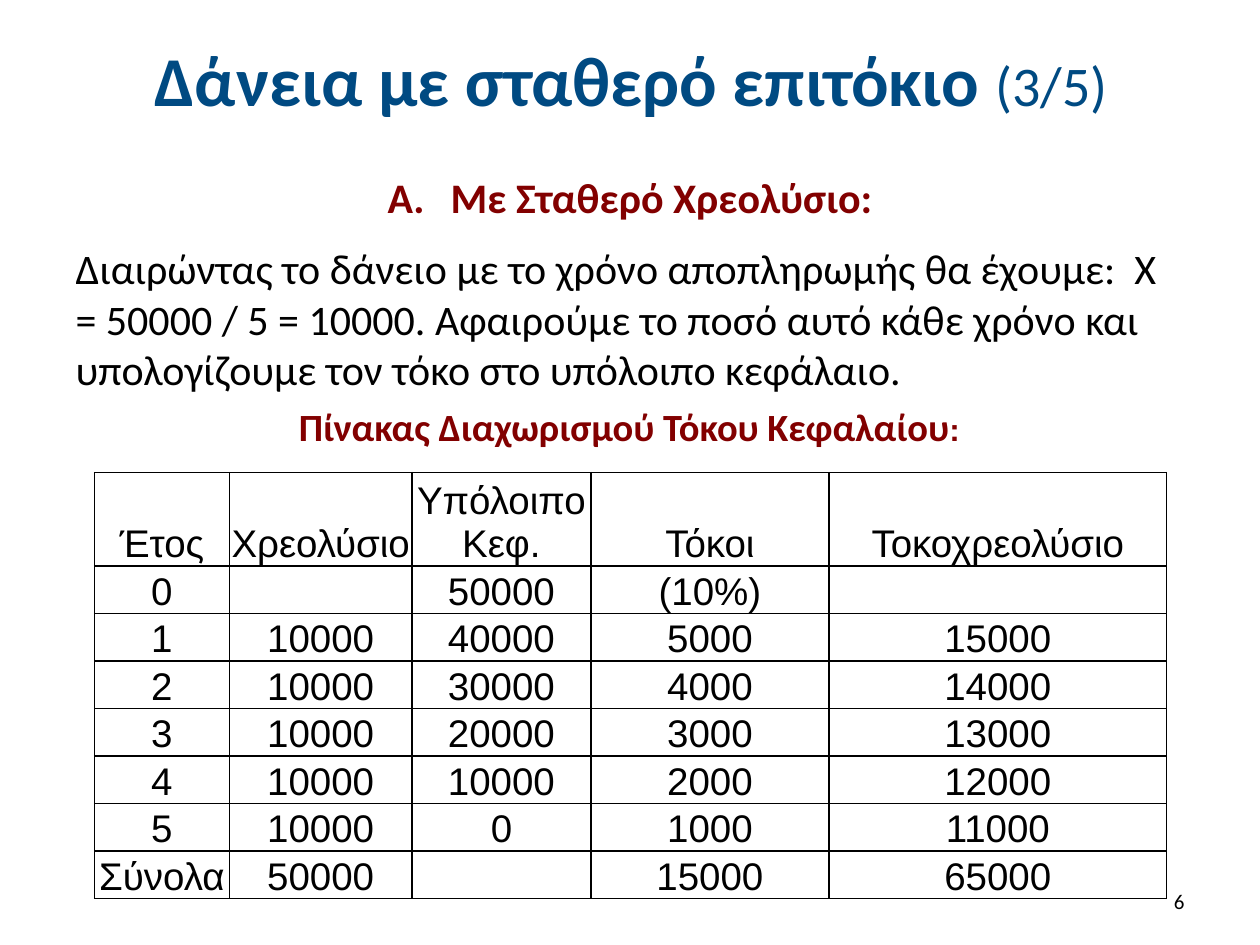
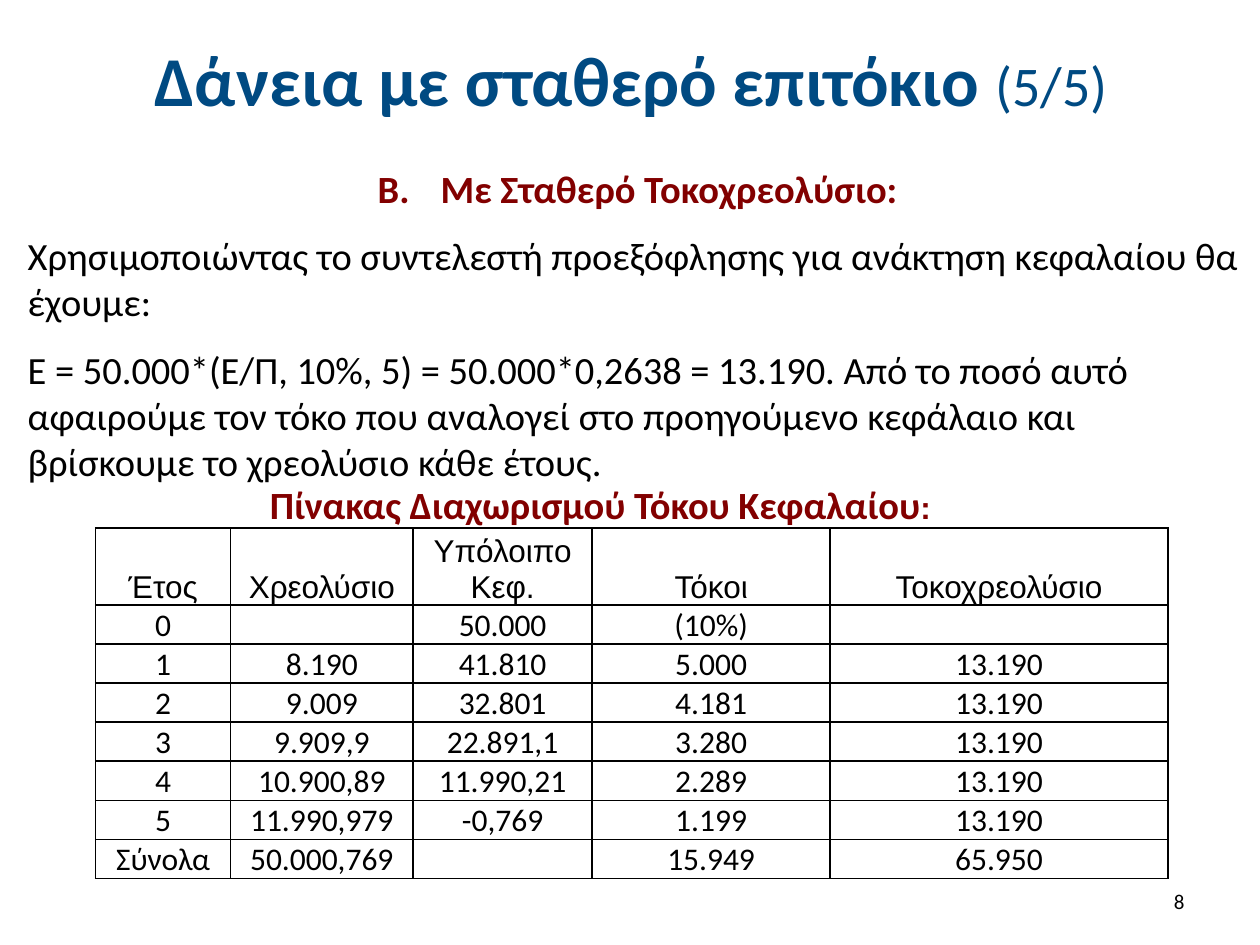
from lxml import etree
from pptx import Presentation
from pptx.dml.color import RGBColor
from pptx.enum.text import MSO_ANCHOR, MSO_AUTO_SIZE, PP_ALIGN
from pptx.oxml.ns import qn
from pptx.util import Inches, Pt

CENTER, LEFT, RIGHT = PP_ALIGN.CENTER, PP_ALIGN.LEFT, PP_ALIGN.RIGHT
MIDDLE, BOTTOM = MSO_ANCHOR.MIDDLE, MSO_ANCHOR.BOTTOM
FIXED = MSO_AUTO_SIZE.NONE
TITLE_AND_CONTENT = 1

# Shared look
BLUE, RED, BLACK = "004A82", "820000", "000000"
HEADING_FONT, TABLE_FONT = "Calibri", "Arial"
TITLE_BOX = (0.51, 0.13, 9, 0.99)
NUMBER_BOX = (7.17, 6.95, 2.33, 0.4)
COLUMN_WIDTHS = (1.07, 1.45, 1.42, 1.89, 2.68)
MINIMUM_ROW_HEIGHT = 0.18
CELL_MARGIN = 0.01

# Shared wording
TITLE = "Δάνεια με σταθερό επιτόκιο "
CAPTION = "Πίνακας Διαχωρισμού Τόκου Κεφαλαίου"
HEADERS = ("Έτος", "Χρεολύσιο", "Υπόλοιπο Κεφ.", "Τόκοι", "Τοκοχρεολύσιο")

LOANS = [
    {
        "part": "(3/5)", "number": "6",
        "body_box": (0.5, 1.31, 9, 1.89), "body_size": 24, "letter": 1,
        "heading": "Με Σταθερό Χρεολύσιο:",
        "body": [
            "Διαιρώντας το δάνειο με το χρόνο αποπληρωμής θα έχουμε:  Χ = "
            "50000 / 5 = 10000. Αφαιρούμε το ποσό αυτό κάθε χρόνο και "
            "υπολογίζουμε τον τόκο στο υπόλοιπο κεφάλαιο.",
        ],
        "caption_box": (2.24, 3.15, 5.51, 0.47),
        "table_box": (0.75, 3.75, 8.5, 3.38),
        "table_size": 22, "value_font": TABLE_FONT,
        "values": [
            ("0", "", "50000", "(10%)", ""),
            ("1", "10000", "40000", "5000", "15000"),
            ("2", "10000", "30000", "4000", "14000"),
            ("3", "10000", "20000", "3000", "13000"),
            ("4", "10000", "10000", "2000", "12000"),
            ("5", "10000", "0", "1000", "11000"),
            ("Σύνολα", "50000", "", "15000", "65000"),
        ],
    },
    {
        "part": "(5/5)", "number": "8",
        "body_box": (0.12, 1.26, 9.88, 2.57), "body_size": 22, "letter": 2,
        "heading": "Με Σταθερό Τοκοχρεολύσιο:",
        "body": [
            "Χρησιμοποιώντας το συντελεστή προεξόφλησης για ανάκτηση "
            "κεφαλαίου θα έχουμε:",
            "Ε = 50.000*(Ε/Π, 10%, 5) = 50.000*0,2638 = 13.190. Από το ποσό "
            "αυτό αφαιρούμε τον τόκο που αναλογεί στο προηγούμενο κεφάλαιο "
            "και βρίσκουμε το χρεολύσιο κάθε έτους.",
        ],
        "caption_box": (2.01, 3.77, 5.51, 0.47),
        "table_box": (0.76, 4.19, 8.5, 2.78),
        "table_size": 18, "value_font": HEADING_FONT,
        "values": [
            ("0", "", "50.000", "(10%)", ""),
            ("1", "8.190", "41.810", "5.000", "13.190"),
            ("2", "9.009", "32.801", "4.181", "13.190"),
            ("3", "9.909,9", "22.891,1", "3.280", "13.190"),
            ("4", "10.900,89", "11.990,21", "2.289", "13.190"),
            ("5", "11.990,979", "-0,769", "1.199", "13.190"),
            ("Σύνολα", "50.000,769", "", "15.949", "65.950"),
        ],
    },
]


def set_all(target, values):
    for name, value in values.items():
        setattr(target, name, value)


def color(hex_value):
    return RGBColor.from_string(hex_value)


def place(shape, box):
    names = ("left", "top", "width", "height")
    set_all(shape, dict(zip(names, map(Inches, box))))


def add_run(paragraph, text, size, hex_value, bold=False, font=HEADING_FONT):
    run = paragraph.add_run()
    run.text = text
    set_all(run.font, {"name": font, "size": Pt(size), "bold": bold})
    run.font.color.rgb = color(hex_value)


def add_title(slide, part):
    title = slide.shapes.title
    place(title, TITLE_BOX)
    set_all(title.text_frame, {"auto_size": FIXED, "vertical_anchor": MIDDLE})
    paragraph = title.text_frame.paragraphs[0]
    paragraph.alignment = CENTER
    add_run(paragraph, TITLE, 40, BLUE, bold=True)
    add_run(paragraph, part, 32, BLUE)


def set_bullet(paragraph, letter=None):
    """Number the paragraph with a capital letter, or drop its bullet."""
    properties = paragraph._p.get_or_add_pPr()
    indent = Inches(0.5) if letter else 0
    properties.set("marL", str(indent))
    properties.set("indent", str(-indent))
    if letter:
        etree.SubElement(properties, qn("a:buFont"), typeface="+mj-lt")
        etree.SubElement(properties, qn("a:buAutoNum"),
                         type="alphaUcPeriod", startAt=str(letter))
    else:
        etree.SubElement(properties, qn("a:buNone"))


def add_body(slide, loan):
    body = slide.placeholders[1]
    place(body, loan["body_box"])
    frame = body.text_frame
    frame.auto_size = FIXED
    for index, text in enumerate([loan["heading"], *loan["body"]]):
        is_heading = index == 0
        paragraph = frame.paragraphs[0] if is_heading else frame.add_paragraph()
        set_all(paragraph, {"alignment": CENTER if is_heading else LEFT,
                            "space_before": Pt(12)})
        set_bullet(paragraph, loan["letter"] if is_heading else None)
        add_run(paragraph, text, loan["body_size"],
                RED if is_heading else BLACK, bold=is_heading)


def add_text_box(slide, box, alignment, **frame_format):
    text_box = slide.shapes.add_textbox(*map(Inches, box))
    set_all(text_box.text_frame, frame_format)
    paragraph = text_box.text_frame.paragraphs[0]
    paragraph.alignment = alignment
    return paragraph


def add_number(slide, number):
    paragraph = add_text_box(slide, NUMBER_BOX, RIGHT,
                             word_wrap=True, vertical_anchor=MIDDLE)
    add_run(paragraph, number, 12, BLACK)


def add_caption(slide, box):
    paragraph = add_text_box(slide, box, CENTER, word_wrap=False,
                             auto_size=MSO_AUTO_SIZE.SHAPE_TO_FIT_TEXT)
    add_run(paragraph, CAPTION, 22, RED, bold=True)
    add_run(paragraph, ":", 18, RED, bold=True, font=TABLE_FONT)


def add_borders(cell):
    properties = cell._tc.get_or_add_tcPr()
    for side in ("lnL", "lnR", "lnT", "lnB"):
        line = etree.SubElement(properties, qn(f"a:{side}"), w=str(Pt(1)))
        fill = etree.SubElement(line, qn("a:solidFill"))
        etree.SubElement(fill, qn("a:srgbClr"), val=BLACK)


def format_cell(cell, text, size, font):
    set_all(cell, {"vertical_anchor": BOTTOM, "margin_bottom": 0,
                   "margin_left": Inches(CELL_MARGIN),
                   "margin_right": Inches(CELL_MARGIN),
                   "margin_top": Inches(CELL_MARGIN)})
    add_borders(cell)
    cell.fill.background()
    paragraph = cell.text_frame.paragraphs[0]
    paragraph.alignment = CENTER
    if text:
        add_run(paragraph, text, size, BLACK, font=font)


def add_payment_table(slide, loan):
    rows = [HEADERS, *loan["values"]]
    graphic_frame = slide.shapes.add_table(
        len(rows), len(HEADERS), *map(Inches, loan["table_box"]))
    table = graphic_frame.table
    set_all(table, {"first_row": False, "horz_banding": False})
    for column, width in zip(table.columns, COLUMN_WIDTHS):
        column.width = Inches(width)
    for row_index, texts in enumerate(rows):
        # Rows grow to fit their text
        table.rows[row_index].height = Inches(MINIMUM_ROW_HEIGHT)
        font = loan["value_font"] if row_index else TABLE_FONT
        for column_index, text in enumerate(texts):
            format_cell(table.cell(row_index, column_index), text,
                        loan["table_size"], font)
    place(graphic_frame, loan["table_box"])


def add_loan_slide(presentation, loan):
    layout = presentation.slide_layouts[TITLE_AND_CONTENT]
    slide = presentation.slides.add_slide(layout)
    add_title(slide, loan["part"])
    add_body(slide, loan)
    add_number(slide, loan["number"])
    add_payment_table(slide, loan)
    add_caption(slide, loan["caption_box"])


def main():
    presentation = Presentation()
    set_all(presentation, {"slide_width": Inches(10),
                           "slide_height": Inches(7.5)})
    for loan in LOANS:
        add_loan_slide(presentation, loan)
    presentation.save("out.pptx")


if __name__ == "__main__":
    main()
